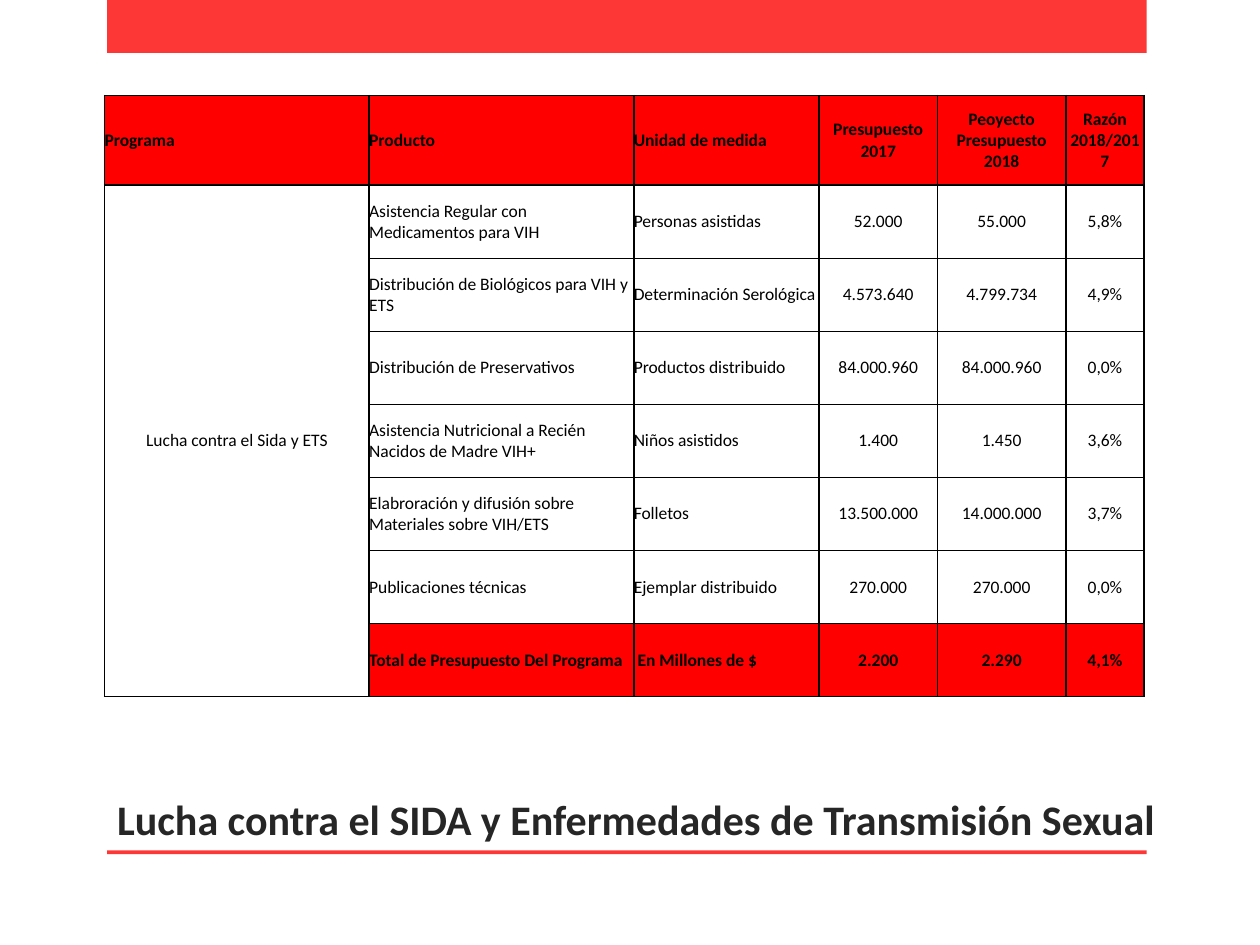
from dataclasses import dataclass

from lxml.etree import SubElement
from pptx import Presentation
from pptx.dml.color import RGBColor
from pptx.enum.shapes import MSO_SHAPE
from pptx.enum.text import MSO_ANCHOR, MSO_AUTO_SIZE, PP_ALIGN
from pptx.oxml.ns import qn
from pptx.slide import Slide
from pptx.util import Inches, Pt

HEADER = ["Programa", "Producto", "Unidad de medida", "Presupuesto 2017",
          "Peoyecto Presupuesto 2018", "Razón 2018/2017"]
PROGRAM = "Lucha contra el Sida y ETS"
PRODUCTS = [
    ["Asistencia Regular con Medicamentos para VIH", "Personas asistidas", "52.000", "55.000", "5,8%"],
    ["Distribución de Biológicos para VIH y ETS", "Determinación Serológica", "4.573.640", "4.799.734", "4,9%"],
    ["Distribución de Preservativos", "Productos distribuido", "84.000.960", "84.000.960", "0,0%"],
    ["Asistencia Nutricional a Recién Nacidos de Madre VIH+", "Niños asistidos", "1.400", "1.450", "3,6%"],
    ["Elabroración y difusión sobre Materiales sobre VIH/ETS", "Folletos", "13.500.000", "14.000.000", "3,7%"],
    ["Publicaciones técnicas", "Ejemplar distribuido", "270.000", "270.000", "0,0%"],
]
TOTAL = ["Total de Presupuesto Del Programa", " En Millones de $", "2.200", "2.290", "4,1%"]
COLUMN_WIDTHS = [2.1, 2.1, 1.47, 0.94, 1.02, 0.62]
HEADER_HEIGHT, ROW_HEIGHT = 0.71, 0.58


def color(value):
    return RGBColor.from_string(value)


@dataclass
class BudgetSlide:
    """Holds the style and the current slide, and adds each kind of element."""
    slide: Slide
    font: str = "Calibri"
    accent: str = "FD3636"
    highlight: str = "FF0000"
    line: str = "000000"

    def format_text(self, paragraph, size, text_color, bold, align):
        paragraph.alignment = align
        for span in paragraph.runs:
            span.font.name = self.font
            span.font.size = Pt(size)
            span.font.bold = bold
            span.font.color.rgb = color(text_color)

    def bar(self, top, height):
        box = self.slide.shapes.add_shape(
            MSO_SHAPE.RECTANGLE, Inches(0.85), Inches(top), Inches(8.25), Inches(height))
        box.shadow.inherit = False
        box.fill.solid()
        box.fill.fore_color.rgb = color(self.accent)
        box.line.fill.background()

    def title(self, text, left, top, width, height):
        box = self.slide.shapes.title
        box.left, box.top = Inches(left), Inches(top)
        box.width, box.height = Inches(width), Inches(height)
        frame = box.text_frame
        frame.text = text
        frame.word_wrap = True
        frame.auto_size = MSO_AUTO_SIZE.NONE
        frame.vertical_anchor = MSO_ANCHOR.BOTTOM
        self.format_text(frame.paragraphs[0], 24, "262626", True, PP_ALIGN.LEFT)

    def borders(self, cell, top, bottom):
        properties = cell._tc.get_or_add_tcPr()
        for side, width in (("L", 1), ("R", 1), ("T", top), ("B", bottom)):
            edge = SubElement(properties, qn(f"a:ln{side}"), w=str(Pt(width)))
            fill = SubElement(edge, qn("a:solidFill"))
            SubElement(fill, qn("a:srgbClr"), val=self.line)

    def cell(self, cell, text, centered, highlighted, top, bottom):
        self.borders(cell, top, bottom)
        if highlighted:
            cell.fill.solid()
            cell.fill.fore_color.rgb = color(self.highlight)
        else:
            cell.fill.background()
        cell.margin_left = cell.margin_right = cell.margin_top = cell.margin_bottom = 0
        cell.vertical_anchor = MSO_ANCHOR.MIDDLE
        cell.text_frame.text = text
        align = PP_ALIGN.CENTER if centered else PP_ALIGN.LEFT
        self.format_text(cell.text_frame.paragraphs[0], 10, self.line, highlighted, align)

    def table(self, rows, left, top):
        heights = [HEADER_HEIGHT] + [ROW_HEIGHT] * (len(rows) - 1)
        table = self.slide.shapes.add_table(
            len(rows), len(COLUMN_WIDTHS), Inches(left), Inches(top),
            Inches(sum(COLUMN_WIDTHS)), Inches(sum(heights))).table
        table.first_row = table.horz_banding = False
        for column, width in zip(table.columns, COLUMN_WIDTHS):
            column.width = Inches(width)
        for row, height in zip(table.rows, heights):
            row.height = Inches(height)
        last = len(rows) - 1
        for i, texts in enumerate(rows):
            for j, text in enumerate(texts):
                program = j == 0 and i > 0
                self.cell(table.cell(i, j), text,
                          centered=program or j > 2,
                          highlighted=i in (0, last) and not program,
                          top=1 if i in (0, 1, last) else 0.5,
                          bottom=1 if i in (0, last - 1, last) else 0.5)
        table.cell(1, 0).merge(table.cell(last, 0))


def main():
    deck = Presentation()
    deck.slide_width, deck.slide_height = Inches(10), Inches(7.5)
    page = BudgetSlide(deck.slides.add_slide(deck.slide_layouts[5]))
    page.bar(0, 0.42)
    page.bar(6.75, 0.03)
    page.title("Lucha contra el SIDA y Enfermedades de Transmisión Sexual", 0.83, 6.19, 8.58, 0.56)
    body = [["", *texts] for texts in PRODUCTS + [TOTAL]]
    body[0][0] = PROGRAM
    page.table([HEADER, *body], 0.83, 0.76)
    deck.save("out.pptx")


if __name__ == "__main__":
    main()
